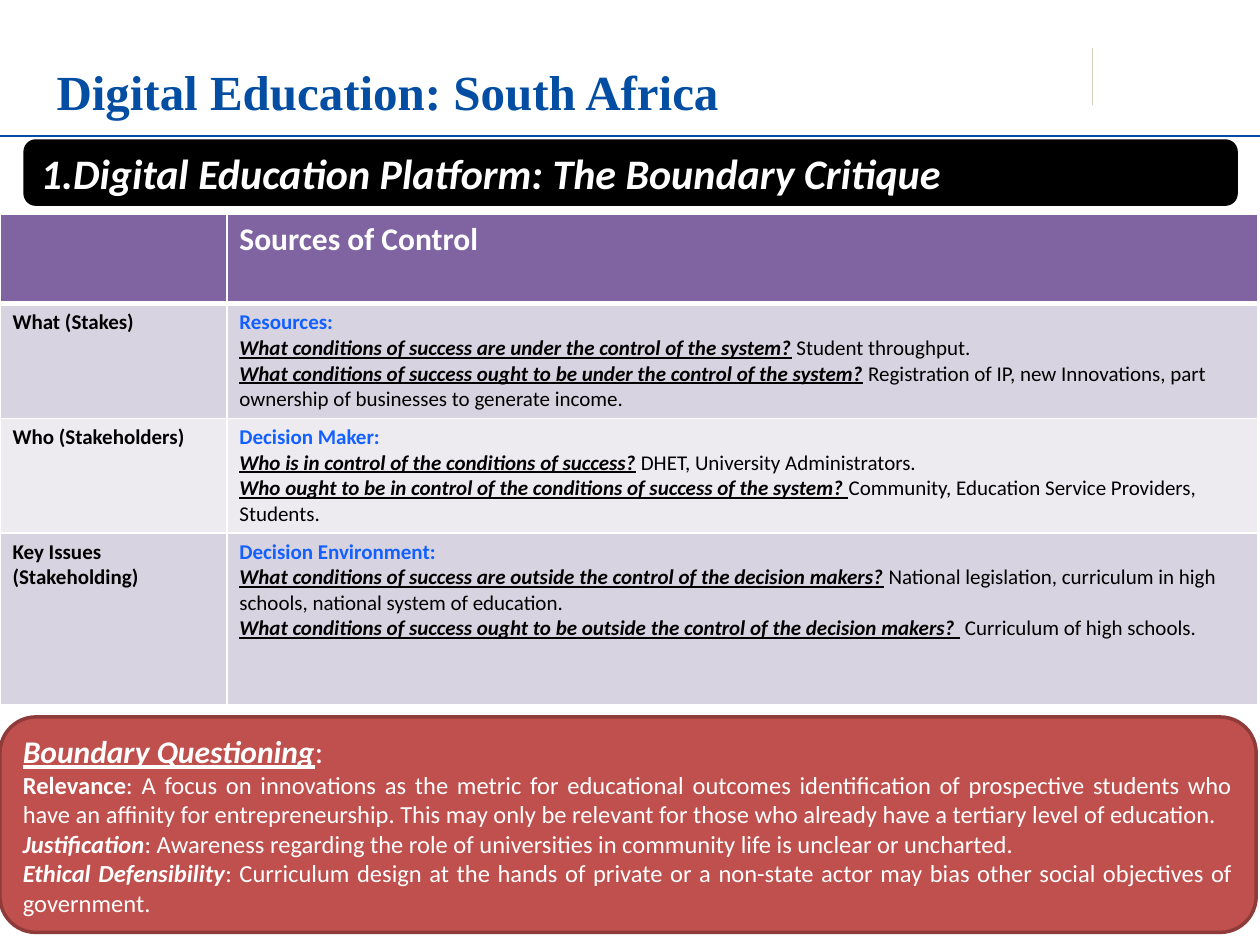
from dataclasses import dataclass

from lxml.etree import SubElement
from pptx import Presentation
from pptx.dml.color import RGBColor
from pptx.enum.shapes import MSO_CONNECTOR, MSO_SHAPE
from pptx.enum.text import MSO_ANCHOR, PP_ALIGN
from pptx.oxml.ns import qn
from pptx.util import Inches, Pt


@dataclass(frozen=True)
class Theme:
    blue: str = "034EA2"
    tan: str = "D5D0B5"
    link: str = "1160FF"
    black: str = "000000"
    white: str = "FFFFFF"
    purple: str = "8064A2"
    bands: tuple = ("D8D3E0", "EDEAF0")
    red: str = "C0504D"
    dark_red: str = "8E3B39"
    body: str = "Calibri"
    heading: str = "Times New Roman"
    title: int = 28
    banner: int = 24
    large: int = 18
    medium: int = 14
    small: int = 12


T = Theme()

# Each paragraph is a list of (text, style) runs; style letters: b, i, u
STAKES = [
    (["What (Stakes)"], "Resources:", [
        ("What conditions of success are under the control of the system?",
         " Student throughput."),
        ("What conditions of success ought to be under the control of the system?",
         " Registration of IP, new Innovations, part ownership of businesses to generate income."),
    ]),
    (["Who (Stakeholders)"], "Decision Maker:", [
        ("Who is in control of the conditions of success?",
         " DHET, University Administrators."),
        ("Who ought to be in control of the conditions of success of the system? ",
         "Community, Education Service Providers, Students."),
    ]),
    (["Key Issues", "(Stakeholding)"], "Decision Environment:", [
        ("What conditions of success are outside the control of the decision makers?",
         " National legislation, curriculum in high schools, national system of education."),
        ("What conditions of success ought to be outside the control of the decision makers? ",
         " Curriculum of high schools."),
    ]),
]
QUESTIONING = [
    ("Boundary Questioning", "biu", ": ", T.large),
    ("Relevance", "b", ": A focus on innovations as the metric for educational outcomes "
     "identification of prospective students who have an affinity for entrepreneurship. "
     "This may only be relevant for those who already have a tertiary level of education.",
     T.medium),
    ("Justification", "bi", ": Awareness regarding the role of universities in community "
     "life is unclear or uncharted. ", T.medium),
    ("Ethical Defensibility", "bi", ": Curriculum design at the hands of private or a "
     "non-state actor may bias other social objectives of government.", T.medium),
]


def rgb(value):
    return RGBColor.from_string(value)


def write(tf, paragraphs, size, color, font=T.body, align=PP_ALIGN.LEFT):
    for n, runs in enumerate(paragraphs):
        p = tf.add_paragraph() if n else tf.paragraphs[0]
        p.alignment = align
        for text, style, *special in runs:
            r = p.add_run()
            r.text = text
            f = r.font
            f.name, f.size = font, Pt(special[1] if len(special) > 1 else size)
            f.color.rgb = rgb(special[0] if special else color)
            f.bold, f.italic, f.underline = (k in style for k in "biu")


def add_line(s, x1, y1, x2, y2, color, width):
    line = s.shapes.add_connector(MSO_CONNECTOR.STRAIGHT, *map(Inches, (x1, y1, x2, y2)))
    line.line.color.rgb = rgb(color)
    line.line.width = Pt(width)
    SubElement(line._element.spPr, qn("a:effectLst"))


def add_panel(s, box, fill, border):
    sp = s.shapes.add_shape(MSO_SHAPE.ROUNDED_RECTANGLE, *map(Inches, box))
    sp.shadow.inherit = False
    sp.fill.solid()
    sp.fill.fore_color.rgb = rgb(fill)
    sp.line.color.rgb = rgb(border)
    sp.line.width = Pt(2)
    tf = sp.text_frame
    tf.word_wrap = True
    tf.vertical_anchor = MSO_ANCHOR.MIDDLE
    return tf


def style_cell(cell, fill, bottom=1):
    tcPr = cell._tc.get_or_add_tcPr()
    for side, width in (("L", 1), ("R", 1), ("T", 1), ("B", bottom)):
        ln = SubElement(tcPr, qn(f"a:ln{side}"), w=str(Pt(width)))
        SubElement(SubElement(ln, qn("a:solidFill")), qn("a:srgbClr"), val=T.white)
    cell.fill.solid()
    cell.fill.fore_color.rgb = rgb(fill)


def add_header(s, box):
    tf = s.shapes.add_textbox(*map(Inches, box)).text_frame
    tf.word_wrap = True
    tf.vertical_anchor = MSO_ANCHOR.MIDDLE
    write(tf, [[("Digital Education: South Africa", "b")]], T.title, T.blue, T.heading)


def add_banner(s, box):
    tf = add_panel(s, box, T.black, T.black)
    write(tf, [[("1.Digital Education Platform: The Boundary Critique ", "bi")]],
          T.banner, T.white, align=PP_ALIGN.JUSTIFY)


def add_stakes_table(s, box):
    table = s.shapes.add_table(len(STAKES) + 1, 2, *map(Inches, box)).table
    label_width = 1.8
    for col, width in zip(table.columns, (label_width, box[2] - label_width)):
        col.width = Inches(width)
    for row, height in zip(table.rows, (0.71, 0.91, 0.91, 1.36)):
        row.height = Inches(height)

    # Heading row
    for cell in table.rows[0].cells:
        style_cell(cell, T.purple, bottom=3)
    write(table.cell(0, 1).text_frame, [[("Sources of Control", "b")]], T.large, T.white)

    # Label and answers for each stake
    for n, (label, topic, answers) in enumerate(STAKES):
        left, right = table.rows[n + 1].cells
        for cell in (left, right):
            style_cell(cell, T.bands[n % 2], bottom=1)
        write(left.text_frame, [[(line, "b")] for line in label], T.small, T.black)
        lines = [[(topic, "b", T.link)]]
        lines += [[(question, "biu"), (answer, "")] for question, answer in answers]
        write(right.text_frame, lines, T.small, T.black)


def add_questioning(s, box):
    tf = add_panel(s, box, T.red, T.dark_red)
    lines = [[(term, style, T.white, size), (text, "", T.white, size)]
             for term, style, text, size in QUESTIONING]
    write(tf, lines, T.medium, T.white, align=PP_ALIGN.JUSTIFY)


def main():
    prs = Presentation()
    prs.slide_width, prs.slide_height = Inches(10), Inches(7.5)
    s = prs.slides.add_slide(prs.slide_layouts[6])

    # Rules around the header
    add_line(s, 8.67, 0.38, 8.67, 0.83, T.tan, 0.5)
    add_line(s, 0, 1.08, 10, 1.08, T.blue, 1.5)

    add_header(s, (0.35, 0.55, 5.75, 0.35))
    add_banner(s, (0.2, 1.12, 9.61, 0.5))
    add_stakes_table(s, (0, 1.7, 9.98, 3.89))
    add_questioning(s, (0, 5.69, 9.97, 1.71))
    prs.save("out.pptx")


if __name__ == "__main__":
    main()
